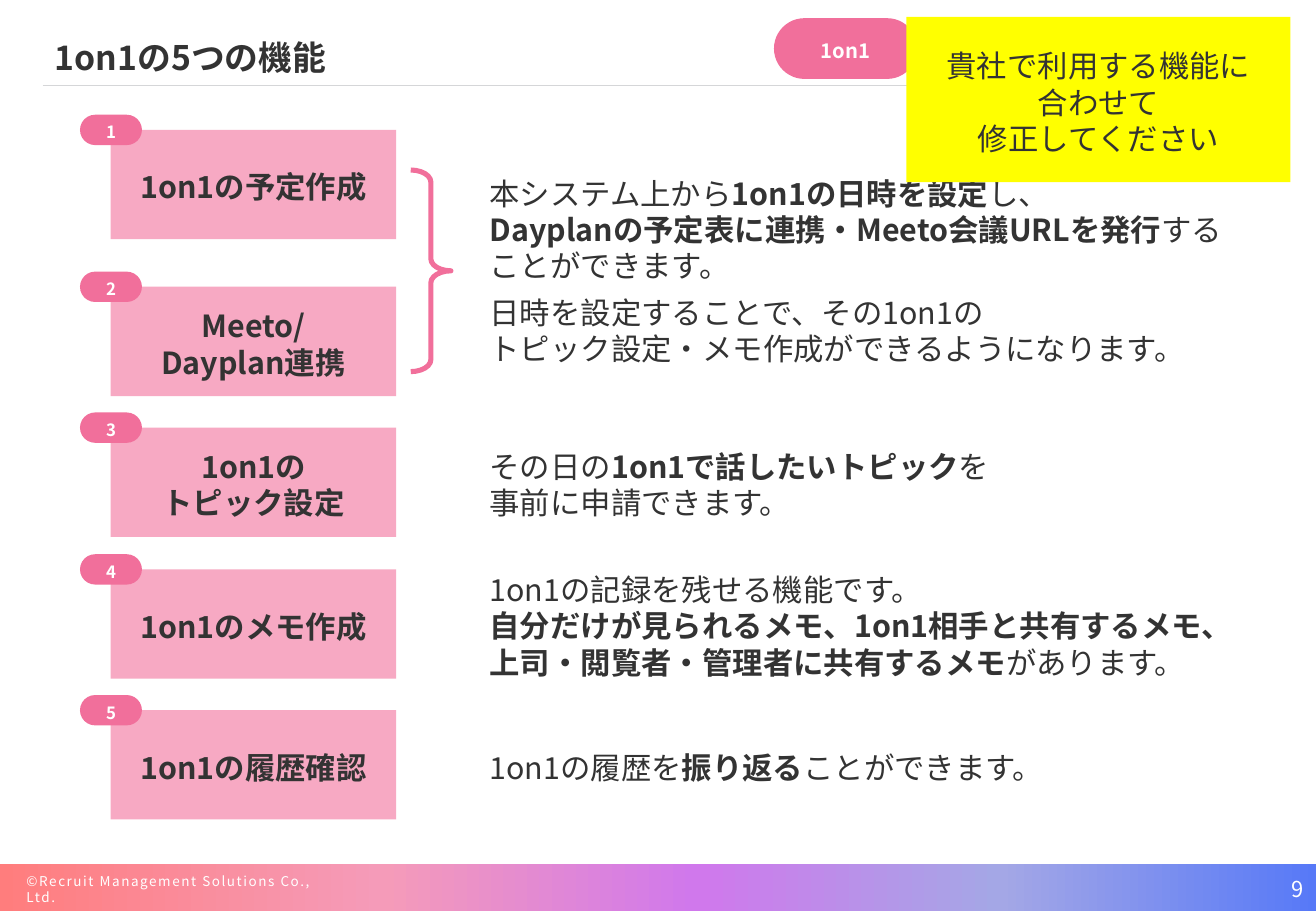
from dataclasses import dataclass

from lxml.etree import SubElement
from pptx import Presentation
from pptx.dml.color import RGBColor
from pptx.enum.shapes import MSO_CONNECTOR, MSO_SHAPE as Preset
from pptx.enum.text import MSO_ANCHOR as Anchor, MSO_AUTO_SIZE as AutoSize, PP_ALIGN as Align
from pptx.oxml.ns import qn
from pptx.util import Pt


@dataclass(frozen=True)
class Theme:
    font: str = "Noto Sans CJK SC"
    notice_font: str = "Noto Sans CJK JP"
    ink: str = "333333"
    white: str = "FFFFFF"
    accent: str = "F16F9B"
    feature: str = "F7A9C3"
    notice: str = "FFFF00"
    rule: str = "D5D6D8"
    band: tuple = ((0, "FF7D7D"), (29, "F59BB9"), (53, "D078EC"), (76, "A4A7E6"), (100, "5779F7"))
    title_size: int = 20
    body_size: int = 18
    page_size: int = 13
    tab_size: int = 12
    badge_size: int = 10
    copyright_size: int = 8
    leading: float = 1.2


THEME = Theme()

FEATURES = (
    (77, "1on1の予定作成"),
    (170, "Meeto/\nDayplan連携"),
    (253.5, "1on1の\nトピック設定"),
    (337.5, "1on1のメモ作成"),
    (421, "1on1の履歴確認"),
)

DESCRIPTIONS = (
    (98.6, 122.4, (
        "本システム上から**1on1の日時を設定**し、\n"
        "**Dayplanの予定表に連携・Meeto会議URLを発行**することができます。",
        "日時を設定することで、その1on1の\nトピック設定・メモ作成ができるようになります。",
    ), 6),
    (260.6, 51, ("その日の**1on1で話したいトピック**を\n事前に申請できます。",), 0),
    (333.4, 72.7, (
        "1on1の記録を残せる機能です。",
        "**自分だけが見られるメモ、1on1相手と共有するメモ、上司・閲覧者・管理者に共有するメモ**があります。",
    ), 0),
    (439.2, 28.8, ("1on1の履歴を**振り返る**ことができます。",), 0),
)


def color(value):
    return RGBColor.from_string(value)


def add_marked_text(paragraph, text):
    for index, piece in enumerate(text.split("**")):
        for line_index, line in enumerate(piece.split("\n")):
            if line_index:
                paragraph.add_line_break()
            if line:
                run = paragraph.add_run()
                run.text = line
                if index % 2:
                    run.font.bold = True


def write(shape, paragraphs, size, ink=THEME.ink, bold=False, align=Align.LEFT,
          anchor=Anchor.MIDDLE, font=THEME.font, gap=0):
    frame = shape.text_frame
    frame.word_wrap = True
    frame.auto_size = AutoSize.NONE
    frame.vertical_anchor = anchor
    frame.margin_left = frame.margin_right = Pt(7.2)
    frame.margin_top, frame.margin_bottom = Pt(5), Pt(2.2)
    for index, text in enumerate(paragraphs):
        paragraph = frame.add_paragraph() if index else frame.paragraphs[0]
        add_marked_text(paragraph, text)
        paragraph.alignment = align
        paragraph.line_spacing = Pt(size * THEME.leading)
        paragraph.space_before = Pt(gap if index else 0)
        paragraph.font.size = Pt(size)
        paragraph.font.bold = bold
        paragraph.font.color.rgb = color(ink)
        paragraph.font.name = font
        defaults = paragraph._p.pPr.find(qn("a:defRPr"))
        SubElement(defaults, qn("a:ea")).set("typeface", font)


def add_block(slide, preset, left, top, width, height, fill=None):
    shape = slide.shapes.add_shape(preset, Pt(left), Pt(top), Pt(width), Pt(height))
    shape.shadow.inherit = False
    shape.line.fill.background()
    if fill:
        shape.fill.solid()
        shape.fill.fore_color.rgb = color(fill)
    else:
        shape.fill.background()
    return shape


def add_pill(slide, left, top, width, height, text, size):
    pill = add_block(slide, Preset.ROUNDED_RECTANGLE, left, top, width, height, THEME.accent)
    pill.adjustments[0] = 0.5
    write(pill, [text], size, THEME.white, True, Align.CENTER)


def add_label(slide, left, top, width, height, paragraphs, size, **style):
    box = slide.shapes.add_textbox(Pt(left), Pt(top), Pt(width), Pt(height))
    write(box, paragraphs, size, **style)
    return box


def add_footer(slide):
    band = add_block(slide, Preset.RECTANGLE, 0, 511.9, 779.76, 28.1)
    band.fill.gradient()
    band.fill.gradient_angle = 0
    stops = band._element.spPr.find(qn("a:gradFill")).find(qn("a:gsLst"))
    stops.clear()
    for position, value in THEME.band:
        stop = SubElement(stops, qn("a:gs"))
        stop.set("pos", str(position * 1000))
        SubElement(stop, qn("a:srgbClr")).set("val", value)
    copyright_box = add_label(slide, 8.6, 517, 193.7, 17.3,
                              ["©Recruit Management Solutions Co., Ltd."],
                              THEME.copyright_size, ink=THEME.white)
    copyright_box.text_frame.paragraphs[0].runs[0].font._element.set("spc", "90")
    add_label(slide, 604, 511.2, 175.7, 28.8, ["9"], THEME.page_size,
              ink=THEME.white, align=Align.RIGHT)


def add_header(slide):
    rule = slide.shapes.add_connector(MSO_CONNECTOR.STRAIGHT, Pt(25.2), Pt(50.4), Pt(755.3), Pt(50.4))
    rule.line.color.rgb = color(THEME.rule)
    rule.line.width = Pt(0.5)
    SubElement(rule._element.spPr, qn("a:effectLst"))
    title = slide.shapes.title
    title.left, title.top, title.width, title.height = Pt(25.2), Pt(10.8), Pt(672.5), Pt(43.2)
    write(title, ["1on1の5つの機能"], THEME.title_size, bold=True)


def add_feature(slide, number, top, name):
    box = add_block(slide, Preset.RECTANGLE, 65.6, top, 169.2, 64.8, THEME.feature)
    write(box, [name], THEME.body_size, bold=True, align=Align.CENTER)
    add_pill(slide, 47.4, top - 9, 36.7, 18, str(number), THEME.badge_size)


def add_brace(slide):
    brace = add_block(slide, Preset.RIGHT_BRACE, 243.4, 100.8, 23.8, 119.5)
    brace.adjustments[0] = 0.3
    brace.adjustments[1] = 0.5
    brace.line.color.rgb = color(THEME.accent)
    brace.line.width = Pt(3)


def add_notice(slide):
    notice = add_block(slide, Preset.RECTANGLE, 537.1, 10, 227.5, 98, THEME.notice)
    write(notice, ["貴社で利用する機能に\n合わせて\n修正してください"], THEME.body_size,
          align=Align.CENTER, font=THEME.notice_font)


def main():
    presentation = Presentation()
    presentation.slide_width, presentation.slide_height = Pt(779.76), Pt(540)
    slide = presentation.slides.add_slide(presentation.slide_layouts.get_by_name("Title Only"))
    add_footer(slide)
    add_header(slide)
    for number, (top, name) in enumerate(FEATURES, start=1):
        add_feature(slide, number, top, name)
    for top, height, paragraphs, gap in DESCRIPTIONS:
        add_label(slide, 283, top, 450, height, paragraphs, THEME.body_size,
                  anchor=Anchor.TOP, gap=gap)
    add_brace(slide)
    add_pill(slide, 458.6, 10.8, 85, 36, "1on1", THEME.tab_size)
    add_notice(slide)
    presentation.save("out.pptx")


if __name__ == "__main__":
    main()
